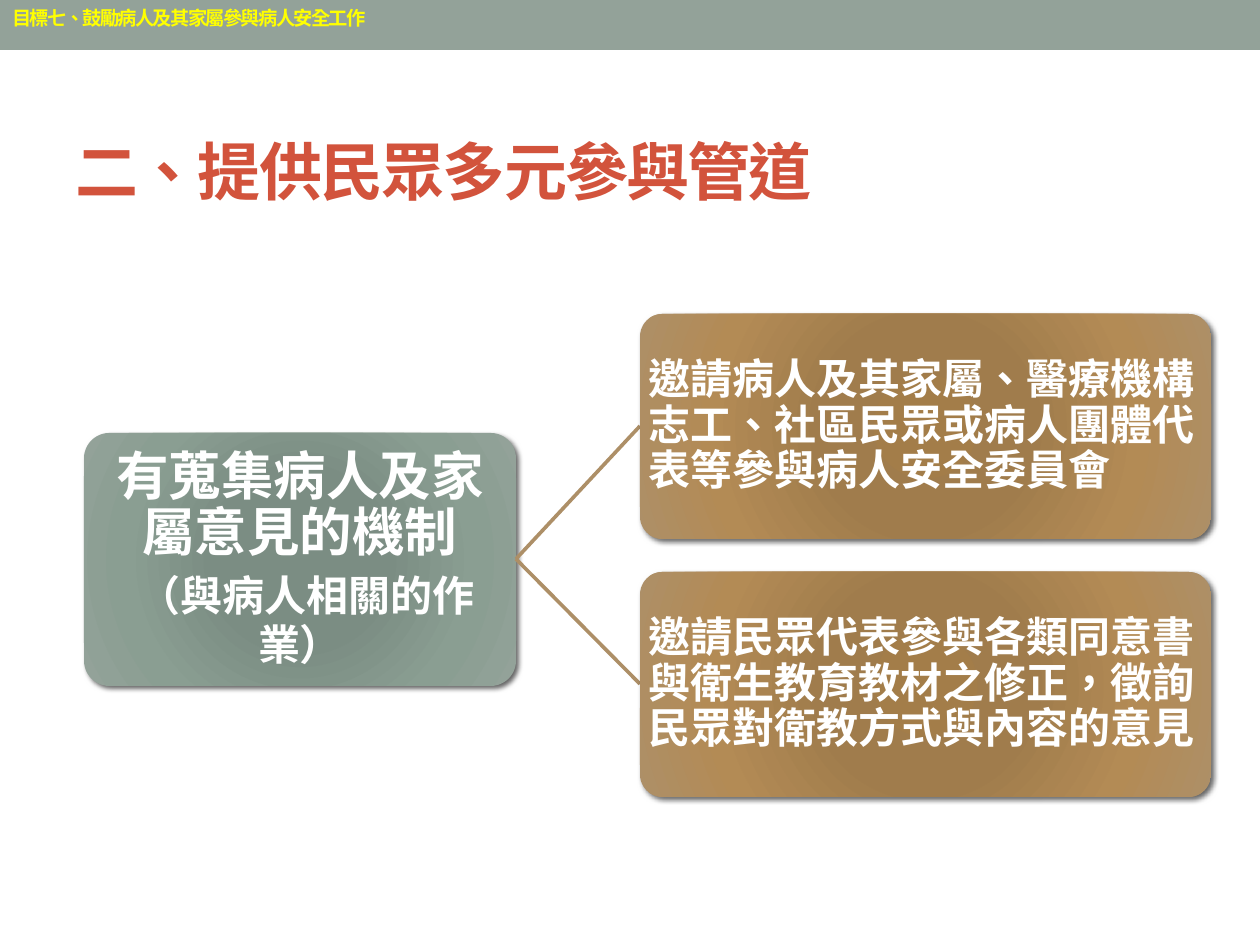
from pptx import Presentation, oxml
from pptx import util as u
from pptx.dml import color
from pptx.enum import lang, shapes, text
from pptx.oxml import ns

SCALE = 914400 / 126
FONT = "Arial"
GREEN = ["7B8E82", "7B8D83", "8A9E92", "93A299"]
BROWN = ["A37D49", "A07C4C", "B38B55", "AD8F67"]
STOPS = [0, 34, 70, 100]
BREAK = "\v"


def px(length):
    return u.Emu(round(length * SCALE))


def place(box):
    return [px(length) for length in box]


def rgb(code):
    return color.RGBColor.from_string(code)


def element(tag, body):
    return oxml.parse_xml(f"<a:{tag} {ns.nsdecls('a')} {body}")


def write(shape, spans, code, spacing=None, align=text.PP_ALIGN.LEFT, tracking=None):
    frame = shape.text_frame
    frame.word_wrap = True
    para = frame.paragraphs[0]
    para.alignment = align
    para.line_spacing = spacing
    for content, size in spans:
        if content == BREAK:
            para.add_line_break()
            continue
        span = para.add_run()
        span.text = content
        span.font.name = FONT
        span.font.size = u.Pt(size)
        span.font.bold = True
        span.font.color.rgb = rgb(code)
        span.font.language_id = lang.MSO_LANGUAGE_ID.TAIWAN_CHINESE \
            if hasattr(lang.MSO_LANGUAGE_ID, "TAIWAN_CHINESE") \
            else lang.MSO_LANGUAGE_ID.TRADITIONAL_CHINESE
        if tracking:
            span.font._element.set("spc", str(tracking * 100))


def add_header(page, box):
    left, top, width, height = box
    band = page.shapes.add_shape(shapes.MSO_SHAPE.RECTANGLE, *place(box))
    band.shadow.inherit = False
    band.fill.solid()
    band.fill.fore_color.rgb = rgb("93A299")
    band.line.fill.background()
    label = page.shapes.add_textbox(*place((left, top, width // 2, 37)))
    write(label, [("目標七、鼓勵病人及其家屬參與病人安全工作", 11)], "FFFF00", tracking=-1)


def add_title(page, box):
    title = page.shapes.add_textbox(*place(box))
    title.text_frame.vertical_anchor = text.MSO_ANCHOR.MIDDLE
    write(title, [("二、提供民眾多元參與管道", 36)], "D2533C", spacing=1.76, tracking=-1)


def add_card(page, box, palette, spans, align):
    card = page.shapes.add_shape(shapes.MSO_SHAPE.ROUNDED_RECTANGLE, *place(box))
    card.adjustments[0] = 0.1
    card.line.fill.background()
    card.shadow.inherit = False
    stops = "".join(
        f'<a:gs pos="{stop * 1000}"><a:srgbClr val="{code}"/></a:gs>'
        for stop, code in zip(STOPS, palette))
    gradient = element("gradFill", (
        f'><a:gsLst>{stops}</a:gsLst><a:path path="circle">'
        '<a:fillToRect l="100000" t="100000" r="100000" b="100000"/>'
        '</a:path></a:gradFill>'))
    properties = card._element.spPr
    properties.find(ns.qn("a:prstGeom")).addnext(gradient)
    properties.find(ns.qn("a:effectLst")).append(element("outerShdw", (
        f'blurRad="{u.Pt(3)}" dist="{u.Pt(2)}" dir="2700000" rotWithShape="0">'
        '<a:srgbClr val="000000"><a:alpha val="60000"/></a:srgbClr></a:outerShdw>')))
    frame = card.text_frame
    frame.vertical_anchor = text.MSO_ANCHOR.MIDDLE
    frame.margin_left = frame.margin_right = px(2)
    frame.margin_top = frame.margin_bottom = px(2)
    write(card, spans, "FFFFFF", spacing=0.9, align=align)
    para = frame.paragraphs[0]._p.get_or_add_pPr()
    para.find(ns.qn("a:lnSpc")).addnext(
        element("spcAft", '><a:spcPct val="35000"/></a:spcAft>'))


def add_branch(page, start, end):
    branch = page.shapes.add_connector(
        shapes.MSO_CONNECTOR.STRAIGHT, *place(start), *place(end))
    branch.line.color.rgb = rgb("AD8F67")
    branch.line.width = u.Pt(2.08)
    branch._element.spPr.append(element("effectLst", "/>"))


def add_tree(page, box):
    left, top, width, height = box
    root_width, root_height = 432, 253
    leaf_width, leaf_height = 571, 225
    root_top = top + (height - root_height) // 2 + 4
    leaf_left = left + width - leaf_width
    fork = (left + root_width, root_top + root_height // 2)
    add_card(page, (left, root_top, root_width, root_height), GREEN,
             [("有蒐集病人及家屬意見的機制", 30), (BREAK, 30),
              (" ", 32), ("（與病人相關的作業）", 24)], text.PP_ALIGN.CENTER)
    leaves = [
        "邀請病人及其家屬、醫療機構志工、社區民眾或病人團體代表等參與病人安全委員會",
        "邀請民眾代表參與各類同意書與衛生教育教材之修正，徵詢民眾對衛教方式與內容的意見",
    ]
    pitch = (height - leaf_height) // (len(leaves) - 1)
    for index, content in enumerate(leaves):
        leaf_top = top + index * pitch
        add_branch(page, fork, (leaf_left, leaf_top + leaf_height // 2))
        add_card(page, (leaf_left, leaf_top, leaf_width, leaf_height), BROWN,
                 [(content, 24)], text.PP_ALIGN.LEFT)


def main():
    deck = Presentation()
    deck.slide_width, deck.slide_height = px(1260), px(945)
    page = deck.slides.add_slide(deck.slide_layouts[6])
    add_header(page, (0, 0, 1260, 50))
    add_title(page, (63, 74, 1134, 136))
    add_tree(page, (84, 314, 1127, 483))
    deck.save("out.pptx")


if __name__ == "__main__":
    main()
